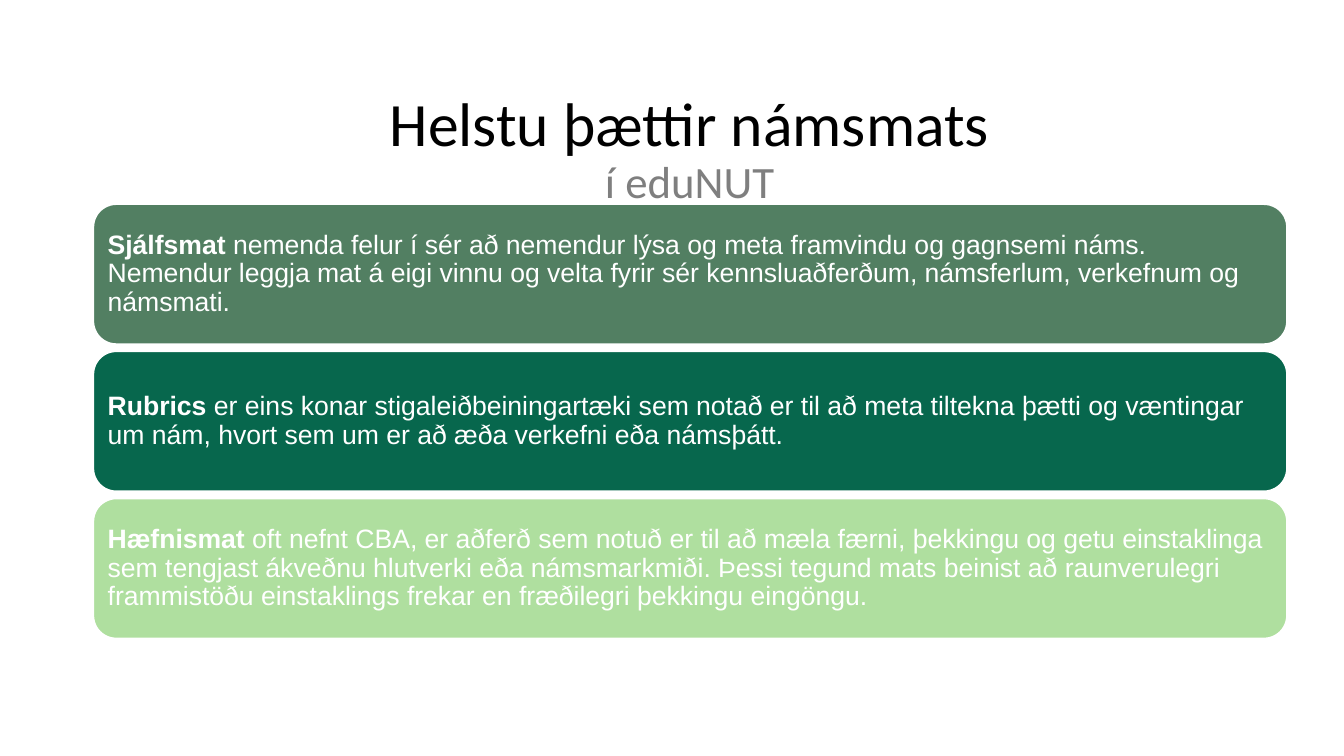
from pptx import Presentation
from pptx.dml.color import RGBColor
from pptx.enum.shapes import MSO_SHAPE as Shape
from pptx.enum.text import MSO_ANCHOR as Anchor, PP_ALIGN as Align
from pptx.util import Inches, Pt

WIDE, HIGH = 13.33, 7.5
CARDS = [
    ("527F62", "Sjálfsmat",
     " nemenda felur í sér að nemendur lýsa og meta framvindu og gagnsemi náms. "
     "Nemendur leggja mat á eigi vinnu og velta fyrir sér kennsluaðferðum, "
     "námsferlum, verkefnum og námsmati."),
    ("07674D", "Rubrics",
     " er eins konar stigaleiðbeiningartæki sem notað er til að meta tiltekna "
     "þætti og væntingar um nám, hvort sem um er að æða verkefni eða námsþátt."),
    ("AFDF9F", "Hæfnismat",
     " oft nefnt CBA, er aðferð sem notuð er til að mæla færni, þekkingu og getu "
     "einstaklinga sem tengjast ákveðnu hlutverki eða námsmarkmiði. Þessi tegund "
     "mats beinist að raunverulegri frammistöðu einstaklings frekar en fræðilegri "
     "þekkingu eingöngu."),
]


def tint(color, code):
    color.rgb = RGBColor.from_string(code)


def style(item, **values):
    for name, value in values.items():
        setattr(item, name, value)


def write(para, text, code, **font):
    run = para.add_run()
    run.text = text
    style(run.font, **font)
    tint(run.font.color, code)


def frame(shape, align, across, down):
    text = shape.text_frame
    style(text, word_wrap=True, vertical_anchor=Anchor.MIDDLE,
          margin_left=Inches(across), margin_right=Inches(across),
          margin_top=Inches(down), margin_bottom=Inches(down))
    para = text.paragraphs[0]
    style(para, alignment=align, line_spacing=0.9)
    return para


def title(slide, box):
    shape = slide.shapes.add_textbox(*map(Inches, box))
    para = frame(shape, Align.CENTER, 0.1, 0.05)
    write(para, "Helstu þættir námsmats", "000000", name="Calibri", size=Pt(44))
    para.add_line_break()
    write(para, "í eduNUT", "7F7F7F", name="Calibri", size=Pt(32))


def card(slide, box, fill, head, body):
    shape = slide.shapes.add_shape(Shape.ROUNDED_RECTANGLE, *map(Inches, box))
    shape.shadow.inherit = False
    shape.fill.solid()
    tint(shape.fill.fore_color, fill)
    tint(shape.line.color, "FFFFFF")
    shape.line.width = Pt(2)
    para = frame(shape, Align.LEFT, 0.08, 0.08)
    for text, bold in ((head, True), (body, False)):
        write(para, text, "FFFFFF", name="Arial", size=Pt(19), bold=bold)


def stack(slide, box, cards, gap=0.06):
    left, top, width, height = box
    tall = (height - gap * (len(cards) - 1)) / len(cards)
    for row, parts in enumerate(cards):
        card(slide, (left, top + row * (tall + gap), width, tall), *parts)


def main():
    deck = Presentation()
    style(deck, slide_width=Inches(WIDE), slide_height=Inches(HIGH))
    slide = deck.slides.add_slide(deck.slide_layouts[6])
    title(slide, (1.09, 0.82, 11.5, 1.35))
    stack(slide, (0.92, 2.02, 11.85, 4.32), CARDS)
    deck.save("out.pptx")


if __name__ == "__main__":
    main()
